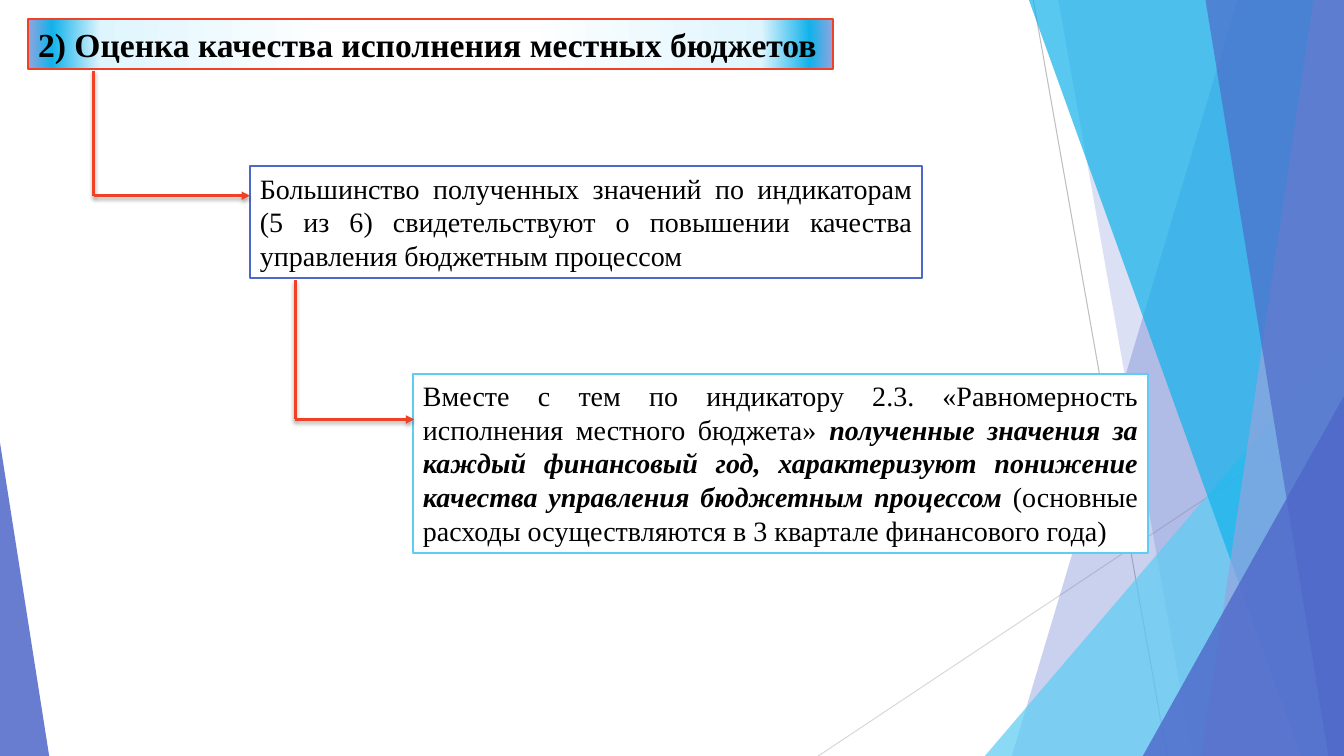
"""Build the slide on the quality of local budget execution."""
from dataclasses import dataclass

from lxml import etree
from pptx import Presentation
from pptx import util as u
from pptx.dml.color import RGBColor
from pptx.enum import shapes, text
from pptx.oxml import parse_xml
from pptx.oxml.ns import nsdecls, qn

WIDTH, HEIGHT = 33.87, 19.05
FONT = "Times New Roman"
COLORS = {
    "black": "000000", "white": "FFFFFF", "red": "F14124", "indigo": "4E67C8",
    "lavender": "95A4DE", "sky": "5ECCF3", "azure": "12B2EB", "ice": "DFF5FD",
    "gray": "BFBFBF", "pale_gray": "D9D9D9",
}
TITLE_STOPS = [(24, "white"), (82, "ice"), (94, "azure"), (100, "lavender")]


@dataclass
class Line:
    x1: float
    y1: float
    x2: float
    y2: float
    color: str
    width: float = 0.75


@dataclass
class Band:
    top_x: float
    bottom_x: float
    color: str
    alpha: int


@dataclass
class Wedge:
    x: float
    y: float
    w: float
    h: float
    apex: float
    color: str
    alpha: int


@dataclass
class Box:
    x: float
    y: float
    w: float
    h: float
    line: str
    runs: list[tuple[str, bool, bool]]
    size: int = 20
    align: text.PP_ALIGN = text.PP_ALIGN.JUSTIFY


@dataclass
class Elbow:
    x: float
    top: float
    bottom: float
    end_x: float


GUIDES = [
    Line(26.04, 0, 29.41, HEIGHT, "gray"),
    Line(WIDTH, 10.24, 20.62, HEIGHT, "pale_gray"),
]
FACETS = [
    Band(31.19, 25.5, "indigo", 30),
    Band(26.67, 30.05, "indigo", 20),
    Wedge(24.82, 8.46, 9.05, 10.59, 1, "sky", 72),
    Band(25.93, 32.79, "azure", 70),
    Band(33.1, 30.28, "lavender", 70),
    Band(30.38, 33.48, "indigo", 65),
    Wedge(28.8, 9.98, 5.07, 9.07, 1, "indigo", 80),
    Wedge(0, 11.15, 1.24, 7.9, 0, "indigo", 85),
]
TITLE = Box(0.71, 0.48, 20.29, 1.27, "red", [
    ("2) Оценка качества исполнения местных бюджетов", True, False),
], 24, text.PP_ALIGN.LEFT)
FINDINGS = [
    Box(6.3, 4.19, 16.94, 2.82, "indigo", [
        ("Большинство полученных значений по индикаторам (5 из 6) свидетельствуют "
         "о повышении качества управления бюджетным процессом", False, False),
    ]),
    Box(10.41, 9.42, 18.52, 4.52, "sky", [
        ("Вместе с тем по индикатору 2.3. «Равномерность исполнения местного бюджета» ",
         False, False),
        ("полученные значения за каждый финансовый год, характеризуют понижение "
         "качества управления бюджетным процессом", True, True),
        (" (основные расходы осуществляются в 3 квартале финансового года)",
         False, False),
    ]),
]
ELBOWS = [Elbow(2.36, 1.78, 4.93, 6.3), Elbow(7.44, 7.06, 10.57, 10.44)]


def rgb(name: str) -> RGBColor:
    return RGBColor.from_string(COLORS[name])


def paint(sp, color: str, alpha: int = 100) -> None:
    sp.shadow.inherit = False
    sp.fill.solid()
    sp.fill.fore_color.rgb = rgb(color)
    if alpha < 100:
        clr = sp._element.spPr.find(".//" + qn("a:srgbClr"))
        etree.SubElement(clr, qn("a:alpha")).set("val", str(alpha * 1000))


def paint_radial(sp, stops: list[tuple[int, str]]) -> None:
    gs = "".join(f'<a:gs pos="{pos * 1000}"><a:srgbClr val="{COLORS[c]}"/></a:gs>'
                 for pos, c in stops)
    grad = parse_xml(
        f'<a:gradFill {nsdecls("a")} rotWithShape="1"><a:gsLst>{gs}</a:gsLst>'
        '<a:path path="circle"><a:fillToRect l="50000" t="50000" r="50000" b="50000"/>'
        '</a:path></a:gradFill>')
    spPr = sp._element.spPr
    spPr.replace(spPr.find(qn("a:solidFill")), grad)


def add_line(s, line: Line, shadow: bool = False, arrow: bool = False) -> None:
    cx = s.shapes.add_connector(
        shapes.MSO_CONNECTOR.STRAIGHT,
        *(u.Cm(v) for v in (line.x1, line.y1, line.x2, line.y2)))
    cx.line.color.rgb = rgb(line.color)
    cx.line.width = u.Pt(line.width)
    if arrow:
        etree.SubElement(cx.line._get_or_add_ln(), qn("a:tailEnd")).set("type", "triangle")
    effect = (
        f'<a:outerShdw blurRad="{u.Pt(3)}" dist="{u.Pt(2)}" dir="5400000" rotWithShape="0">'
        f'<a:srgbClr val="{COLORS["black"]}"><a:alpha val="35000"/></a:srgbClr>'
        '</a:outerShdw>') if shadow else ""
    cx._element.spPr.append(
        parse_xml(f'<a:effectLst {nsdecls("a")}>{effect}</a:effectLst>'))


def add_facet(s, facet: Band | Wedge) -> None:
    if isinstance(facet, Band):
        fb = s.shapes.build_freeform(u.Cm(facet.top_x), 0)
        corners = [(WIDTH, 0), (WIDTH, HEIGHT), (facet.bottom_x, HEIGHT)]
        fb.add_line_segments([(u.Cm(x), u.Cm(y)) for x, y in corners])
        sp = fb.convert_to_shape()
    else:
        sp = s.shapes.add_shape(
            shapes.MSO_SHAPE.ISOSCELES_TRIANGLE,
            *(u.Cm(v) for v in (facet.x, facet.y, facet.w, facet.h)))
        sp.adjustments[0] = facet.apex
    paint(sp, facet.color, facet.alpha)
    sp.line.fill.background()


def add_run(p, content: str, *, size: int, bold: bool, italic: bool) -> None:
    r = p.add_run()
    r.text = content
    r.font.name, r.font.size = FONT, u.Pt(size)
    r.font.bold, r.font.italic = bold, italic
    r.font.color.rgb = rgb("black")


def add_box(s, box: Box):
    sp = s.shapes.add_shape(shapes.MSO_SHAPE.RECTANGLE,
                            *(u.Cm(v) for v in (box.x, box.y, box.w, box.h)))
    paint(sp, "white")
    sp.line.color.rgb = rgb(box.line)
    sp.line.width = u.Pt(1.5)
    tf = sp.text_frame
    tf.word_wrap = True
    tf.vertical_anchor = text.MSO_ANCHOR.TOP
    p = tf.paragraphs[0]
    p.alignment = box.align
    for content, bold, italic in box.runs:
        add_run(p, content, size=box.size, bold=bold, italic=italic)
    return sp


def add_elbow(s, e: Elbow) -> None:
    add_line(s, Line(e.x, e.top, e.x, e.bottom, "red", 2), shadow=True)
    add_line(s, Line(e.x, e.bottom, e.end_x, e.bottom, "red", 2), shadow=True, arrow=True)


def main() -> None:
    prs = Presentation()
    prs.slide_width, prs.slide_height = u.Cm(WIDTH), u.Cm(HEIGHT)
    s = prs.slides.add_slide(prs.slide_layouts[6])
    for guide in GUIDES:
        add_line(s, guide)
    for facet in FACETS:
        add_facet(s, facet)
    paint_radial(add_box(s, TITLE), TITLE_STOPS)
    for finding in FINDINGS:
        add_box(s, finding)
    for elbow in ELBOWS:
        add_elbow(s, elbow)
    prs.save("out.pptx")


if __name__ == "__main__":
    main()
